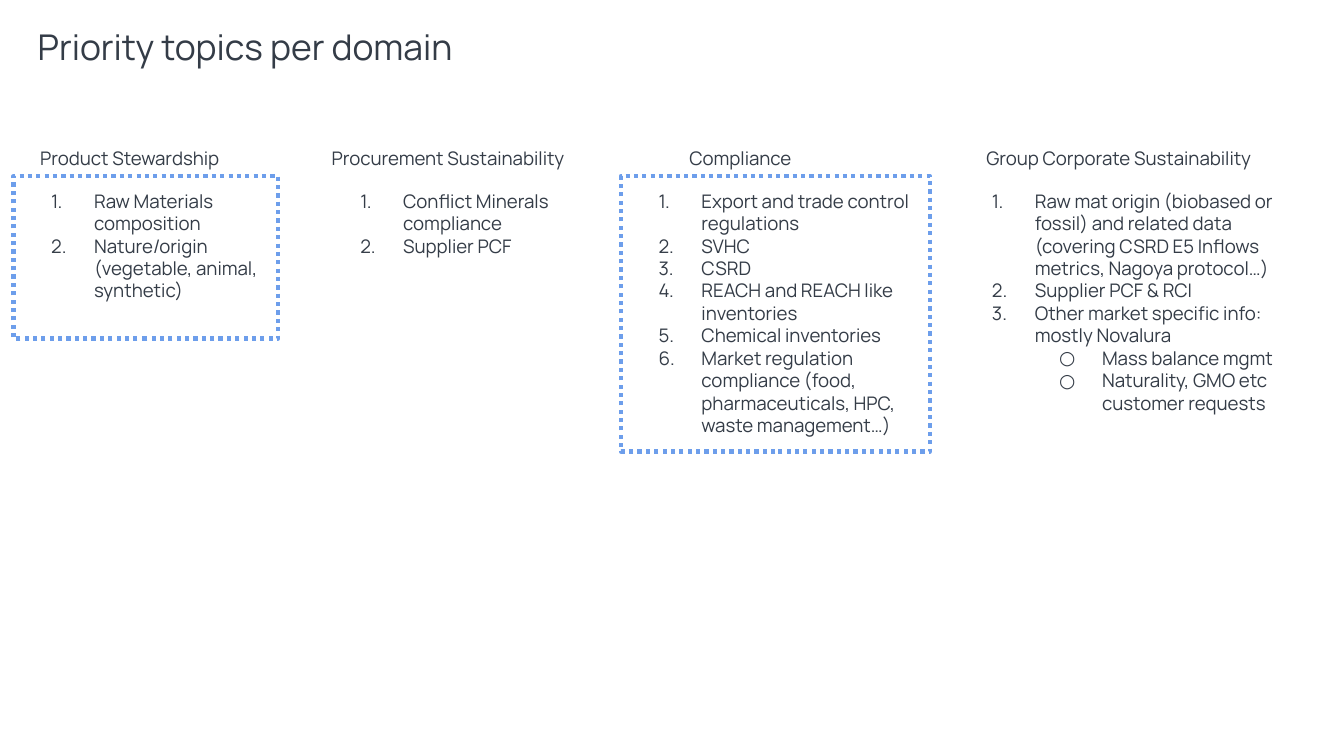
from dataclasses import dataclass

from lxml import etree
from pptx import Presentation
from pptx.dml.color import RGBColor
from pptx.enum.dml import MSO_LINE
from pptx.enum.text import MSO_ANCHOR, MSO_AUTO_SIZE, PP_ALIGN
from pptx.oxml.ns import qn
from pptx.util import Pt

TOP = MSO_ANCHOR.TOP
LEFT = PP_ALIGN.LEFT
FIXED = MSO_AUTO_SIZE.NONE
DOT = MSO_LINE.ROUND_DOT


@dataclass(frozen=True)
class Theme:
    """Hold the colours, type sizes and font."""

    ink: str = "343C47"
    edge: str = "6D9EEB"
    face: str = "Manrope"
    head: float = 19
    body: float = 10


THEME = Theme()
HEAD_TOP, HEAD_TALL, LIST_TOP = 71.3, 26.6, 94.3

# Each domain: name, name left and width, list left, width and height, framed, items.
DOMAINS = [
    ("Product Stewardship", (14.4, 128.2), (7.2, 141.8, 87.1), True, [
        ("Raw Materials composition", 0),
        ("Nature/origin (vegetable, animal, synthetic)", 0),
    ]),
    ("Procurement Sustainability", (170.6, 153.4), (172.8, 141.8, 51.1), False, [
        ("Conflict Minerals compliance", 0),
        ("Supplier PCF", 0),
    ]),
    ("Compliance", (362.2, 82.8), (332.6, 165.6, 147.6), True, [
        ("Export and trade control regulations", 0),
        ("SVHC", 0),
        ("CSRD", 0),
        ("REACH and REACH like\vinventories", 0),
        ("Chemical inventories", 0),
        ("Market regulation compliance (food, pharmaceuticals, HPC, "
         "waste management…)", 0),
    ]),
    ("Group Corporate Sustainability", (521.3, 175), (511.2, 194.4, 136.1), False, [
        ("Raw mat origin (biobased or fossil) and related data "
         "(covering CSRD E5 Inflows metrics, Nagoya protocol…)", 0),
        ("Supplier PCF & RCI", 0),
        ("Other market specific info: mostly Novalura", 0),
        ("Mass balance mgmt", 1),
        ("Naturality, GMO etc customer requests", 1),
    ]),
]


def apply(obj, vals):
    """Set each attribute of obj from a dict."""
    for key, val in vals.items():
        setattr(obj, key, val)


def place(shape, left, top, wide, tall, pad):
    """Move a shape and set up its text frame."""
    apply(shape, {"left": Pt(left), "top": Pt(top),
                  "width": Pt(wide), "height": Pt(tall)})
    frame = shape.text_frame
    apply(frame, {"word_wrap": True, "auto_size": FIXED, "vertical_anchor": TOP})
    for side in ("left", "top", "right", "bottom"):
        setattr(frame, f"margin_{side}", Pt(pad))
    return frame


def style(para, size, gap=1.0):
    """Format one paragraph."""
    apply(para, {"alignment": LEFT, "space_before": Pt(0),
                 "space_after": Pt(0), "line_spacing": gap})
    apply(para.font, {"name": THEME.face, "size": Pt(size), "bold": False})
    para.font.color.rgb = RGBColor.from_string(THEME.ink)


def mark(para, level):
    """Give a paragraph a number, or a ring at the second level."""
    para.level = level
    props = para._p.get_or_add_pPr()
    props.set("marL", str(Pt(36 * (level + 1))))
    props.set("indent", str(Pt(-23)))
    tint = etree.SubElement(props, qn("a:buClr"))
    etree.SubElement(tint, qn("a:srgbClr"), val=THEME.ink)
    etree.SubElement(props, qn("a:buFont"), typeface=THEME.face)
    if level:
        etree.SubElement(props, qn("a:buChar"), char="○")
    else:
        etree.SubElement(props, qn("a:buAutoNum"), type="arabicPeriod")


def add_title(slide, text):
    """Fill the title placeholder."""
    frame = place(slide.shapes.title, 20.2, 15.8, 510.5, 33.8, 0)
    frame.text = text
    style(frame.paragraphs[0], THEME.head, 0.9)


def add_name(slide, text, left, wide):
    """Add the name above a list."""
    box = slide.shapes.add_textbox(0, 0, 0, 0)
    frame = place(box, left, HEAD_TOP, wide, HEAD_TALL, 7.2)
    frame.text = text
    style(frame.paragraphs[0], THEME.body)


def fill_list(shape, left, wide, tall, framed, items):
    """Fill a body placeholder with a list, dotted round if framed."""
    frame = place(shape, left, LIST_TOP, wide, tall, 7.2)
    frame.text = "\n".join(text for text, _ in items)
    for para, (_, level) in zip(frame.paragraphs, items):
        mark(para, level)
        style(para, THEME.body)
    if framed:
        apply(shape.line, {"width": Pt(2.25), "dash_style": DOT})
        shape.line.color.rgb = RGBColor.from_string(THEME.edge)


def main():
    """Build and save the slide."""
    deck = Presentation()
    apply(deck, {"slide_width": Pt(720), "slide_height": Pt(405)})
    slide = deck.slides.add_slide(deck.slide_layouts[4])
    add_title(slide, "Priority topics per domain")
    bodies = list(slide.placeholders)[1:]
    for body, (name, spot, area, framed, items) in zip(bodies, DOMAINS):
        add_name(slide, name, *spot)
        fill_list(body, *area, framed, items)
    deck.save("out.pptx")


if __name__ == "__main__":
    main()
